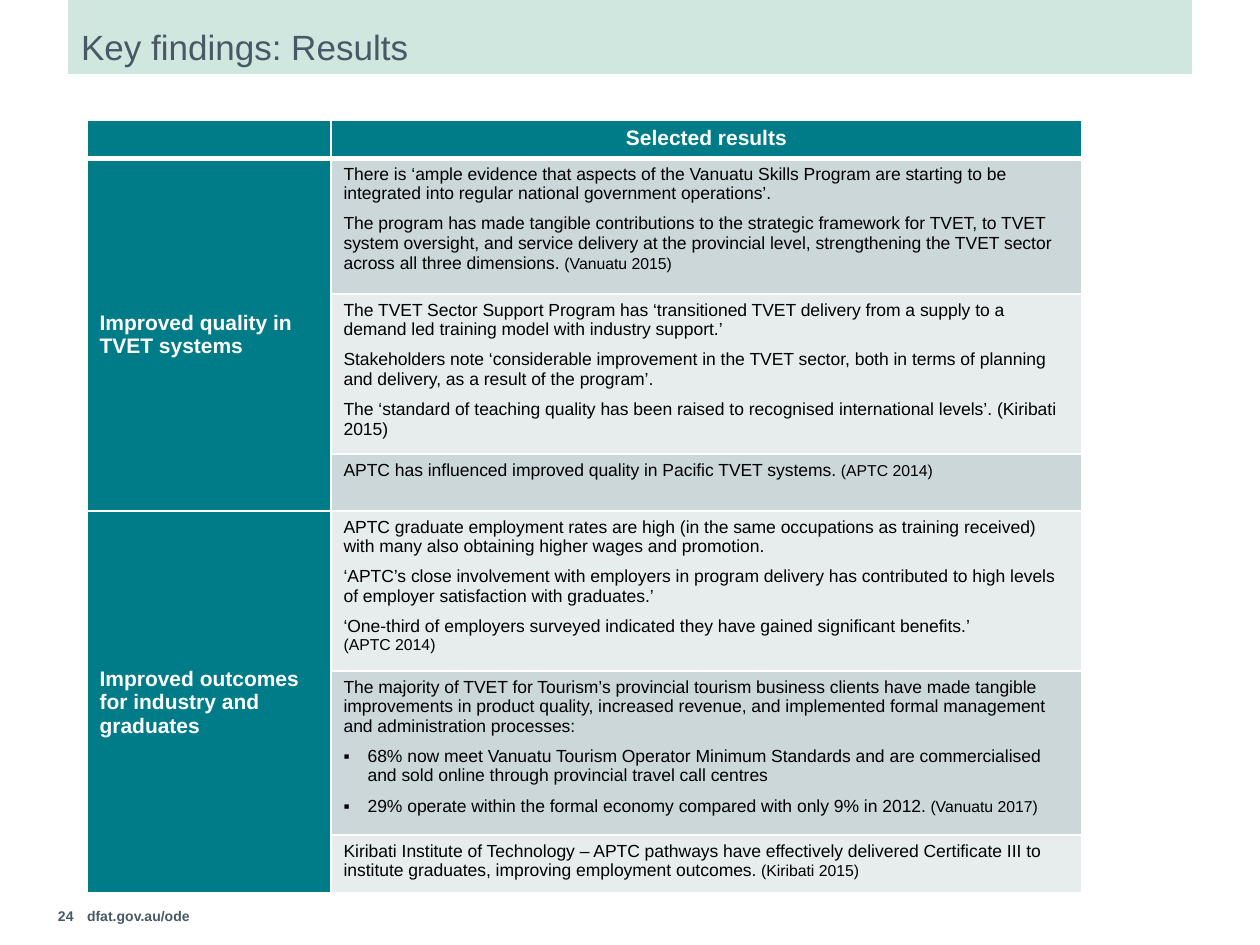
from dataclasses import dataclass

from lxml.etree import SubElement
from pptx import Presentation
from pptx.dml.color import RGBColor
from pptx.enum.text import MSO_ANCHOR, PP_ALIGN
from pptx.oxml.ns import qn
from pptx.util import Pt

PX = 914400 // 126


@dataclass(frozen=True)
class Theme:
    font: str = "Arial"
    slate: str = "485865"
    mint: str = "D0E7E0"
    teal: str = "007C89"
    bands: tuple = ("CCD7DA", "E7ECED")
    white: str = "FFFFFF"
    black: str = "000000"
    title: int = 20
    heading: int = 12
    body: int = 10
    citation: int = 9
    footer: int = 8


theme = Theme()


def style_run(span, size, color, bold=False):
    span.font.name = theme.font
    span.font.size = Pt(size)
    span.font.bold = bold
    span.font.color.rgb = RGBColor.from_string(color)


def style_cell(cell, fill, bottom_width=1):
    """Give a cell white borders and a solid fill; the borders must come first in the XML."""
    properties = cell._tc.get_or_add_tcPr()
    for side, width in (("L", 1), ("R", 1), ("T", 1), ("B", bottom_width)):
        line = SubElement(properties, qn(f"a:ln{side}"), w=str(Pt(width)))
        solid = SubElement(line, qn("a:solidFill"))
        SubElement(solid, qn("a:srgbClr"), val=theme.white)
    cell.fill.solid()
    cell.fill.fore_color.rgb = RGBColor.from_string(fill)


# "|" starts the smaller citation, "▪" marks a bullet
groups = [
    ("Improved quality in TVET systems", [
        ["There is ‘ample evidence that aspects of the Vanuatu Skills Program are starting to be "
         "integrated into regular national government operations’.",
         "The program has made tangible contributions to the strategic framework for TVET, to TVET "
         "system oversight, and service delivery at the provincial level, strengthening the TVET "
         "sector across all three dimensions. |(Vanuatu 2015)"],
        ["The TVET Sector Support Program has ‘transitioned TVET delivery from a supply to a "
         "demand led training model with industry support.’",
         "Stakeholders note ‘considerable improvement in the TVET sector, both in terms of "
         "planning and delivery, as a result of the program’.",
         "The ‘standard of teaching quality has been raised to recognised international levels’. "
         "(Kiribati 2015)"],
        ["APTC has influenced improved quality in Pacific TVET systems. |(APTC 2014)"],
    ]),
    ("Improved outcomes for industry and graduates", [
        ["APTC graduate employment rates are high (in the same occupations as training received) "
         "with many also obtaining higher wages and promotion.",
         "‘APTC’s close involvement with employers in program delivery has contributed to high "
         "levels of employer satisfaction with graduates.’",
         "‘One-third of employers surveyed indicated they have gained significant benefits.’ \v"
         "|(APTC 2014)"],
        ["The majority of TVET for Tourism’s provincial tourism business clients have made "
         "tangible improvements in product quality, increased revenue, and implemented formal "
         "management and administration processes:",
         "▪68% now meet Vanuatu Tourism Operator Minimum Standards and are commercialised and "
         "sold online through provincial travel call centres",
         "▪29% operate within the formal economy compared with only 9% in 2012. |(Vanuatu 2017)"],
        ["Kiribati Institute of Technology – APTC pathways have effectively delivered Certificate "
         "III to institute graduates, improving employment outcomes. |(Kiribati 2015)"],
    ]),
]
column_widths = [244, 751]
row_heights = [35, 136, 160, 57, 160, 164, 58]

deck = Presentation()
deck.slide_width, deck.slide_height = 1260 * PX, 945 * PX
page = deck.slides.add_slide(deck.slide_layouts[5])

# Title band
title = page.shapes.title
title.left, title.top, title.width, title.height = 68 * PX, 0, 1124 * PX, 74 * PX
title.fill.solid()
title.fill.fore_color.rgb = RGBColor.from_string(theme.mint)
frame = title.text_frame
frame.text = "Key findings: Results"
frame.vertical_anchor = MSO_ANCHOR.TOP
frame.margin_left = frame.margin_right = 13 * PX
frame.margin_top = frame.margin_bottom = 30 * PX
para = frame.paragraphs[0]
para.alignment = PP_ALIGN.LEFT
para.line_spacing = 0.9
style_run(para.runs[0], theme.title, theme.slate)

# Results table
table = page.shapes.add_table(
    len(row_heights), len(column_widths), 87 * PX, 120 * PX,
    sum(column_widths) * PX, sum(row_heights) * PX).table
for column, width in zip(table.columns, column_widths):
    column.width = width * PX
for row, height in zip(table.rows, row_heights):
    row.height = height * PX

for cell in table.rows[0].cells:
    style_cell(cell, theme.teal, bottom_width=3)
corner = table.cell(0, 0).text_frame.paragraphs[0]
SubElement(corner._p, qn("a:endParaRPr"), sz=str(theme.heading * 100))
heading = table.cell(0, 1).text_frame
heading.text = "Selected results"
heading.paragraphs[0].alignment = PP_ALIGN.CENTER
style_run(heading.paragraphs[0].runs[0], theme.heading, theme.white, bold=True)

row_index = 1
for group_name, results in groups:
    group_cell = table.cell(row_index, 0)
    group_cell.merge(table.cell(row_index + len(results) - 1, 0))
    group_cell.text_frame.text = group_name
    group_cell.vertical_anchor = MSO_ANCHOR.MIDDLE
    para = group_cell.text_frame.paragraphs[0]
    para.space_after = Pt(6)
    style_run(para.runs[0], theme.heading, theme.white, bold=True)

    for result in results:
        style_cell(table.cell(row_index, 0), theme.teal)
        cell = table.cell(row_index, 1)
        style_cell(cell, theme.bands[(row_index - 1) % 2])
        frame = cell.text_frame
        frame.text = "\n" * (len(result) - 1)
        for para, text in zip(frame.paragraphs, result):
            statement, _, citation = text.partition("|")
            para.text = statement.removeprefix("▪")
            para.space_after = Pt(6)
            for span in para.runs:
                style_run(span, theme.body, theme.black)
            if citation:
                span = para.add_run()
                span.text = citation
                style_run(span, theme.citation, theme.black)
            if statement.startswith("▪"):
                paragraph_properties = para._p.get_or_add_pPr()
                paragraph_properties.set("marL", str(24 * PX))
                paragraph_properties.set("indent", str(-24 * PX))
                SubElement(paragraph_properties, qn("a:buFont"), typeface=theme.font)
                SubElement(paragraph_properties, qn("a:buChar"), char="▪")
        row_index += 1

# Footer
footer_items = [
    ("24", (26, 886, 60, 59), 13, PP_ALIGN.RIGHT),
    ("dfat.gov.au/ode", (87, 901, 195, 30), 0, PP_ALIGN.LEFT),
]
for text, bounds, left_margin, alignment in footer_items:
    box = page.shapes.add_textbox(*(length * PX for length in bounds))
    frame = box.text_frame
    frame.word_wrap = True
    frame.margin_left = left_margin * PX
    frame.vertical_anchor = MSO_ANCHOR.MIDDLE
    frame.text = text
    frame.paragraphs[0].alignment = alignment
    style_run(frame.paragraphs[0].runs[0], theme.footer, theme.slate, bold=True)

deck.save("out.pptx")
